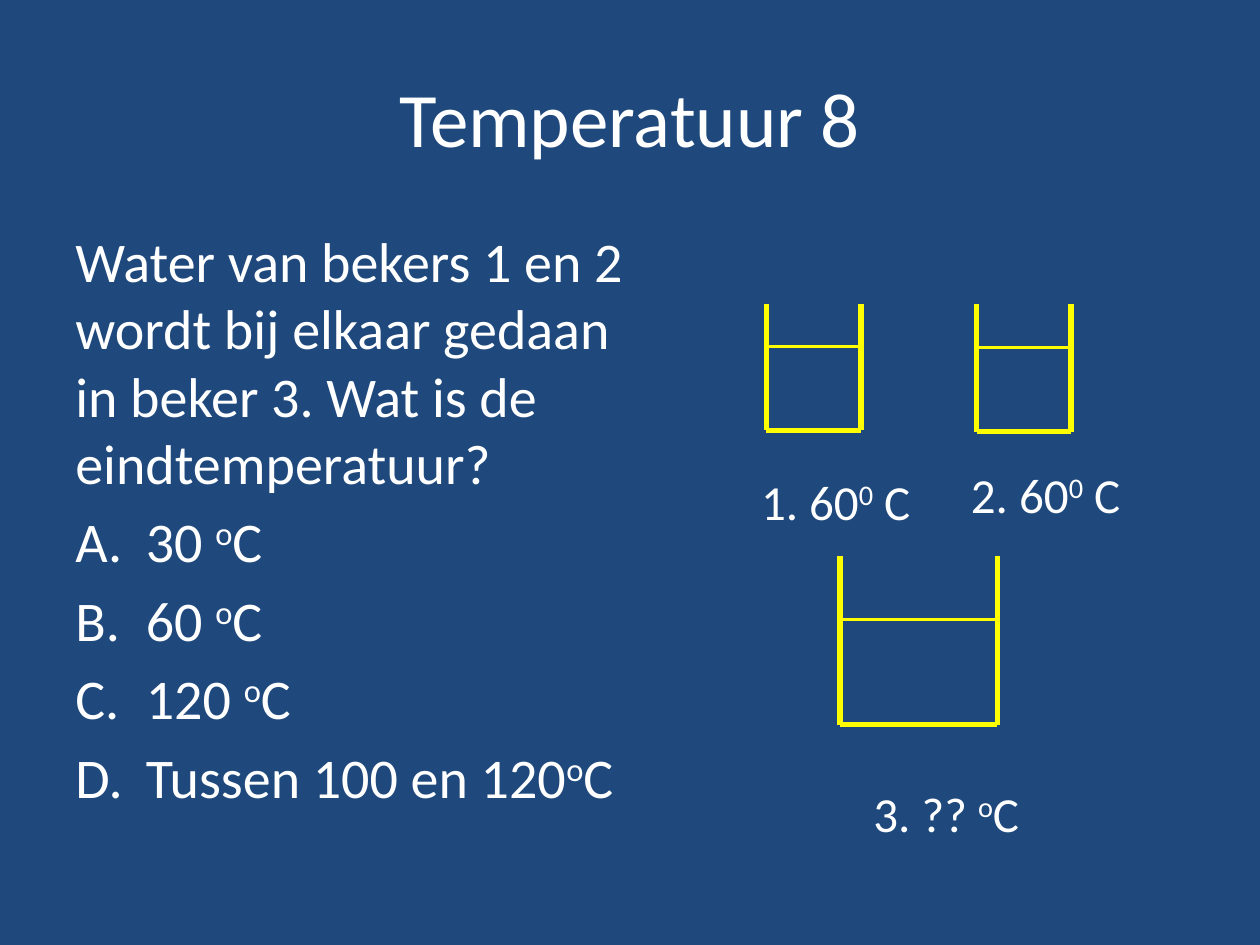
import pptx
import pptx.util
import pptx.dml.color
import pptx.enum.shapes
import pptx.enum.text
import pptx.oxml.ns
import lxml.etree

COLORS = {"background": "1F497D", "text": "FFFFFF", "glass": "FFFF00"}
FONT = "Calibri"
COLUMNS, ROWS = 120, 90

presentation = pptx.Presentation()
presentation.slide_width = pptx.util.Inches(10)
presentation.slide_height = pptx.util.Inches(7.5)
column = presentation.slide_width / COLUMNS
row = presentation.slide_height / ROWS
slide = presentation.slides.add_slide(presentation.slide_layouts[6])
slide.background.fill.solid()
slide.background.fill.fore_color.rgb = pptx.dml.color.RGBColor.from_string(COLORS["background"])


def add_text(left, top, width, height, lines, size, **frame_format):
    """Add a text box; in each line, text between two ^ marks is superscript."""
    box = slide.shapes.add_textbox(
        round(left * column), round(top * row), round(width * column), round(height * row))
    for name, value in frame_format.items():
        setattr(box.text_frame, name, value)
    for index, line in enumerate(lines):
        paragraph = box.text_frame.paragraphs[0] if index == 0 else box.text_frame.add_paragraph()
        for part, text in enumerate(line.split("^")):
            run = paragraph.add_run()
            run.text = text
            font_format = {"name": FONT, "size": pptx.util.Pt(size)}
            for name, value in font_format.items():
                setattr(run.font, name, value)
            run.font.color.rgb = pptx.dml.color.RGBColor.from_string(COLORS["text"])
            if part % 2:
                run._r.get_or_add_rPr().set("baseline", "30000")
    return box.text_frame.paragraphs


def add_line(start_column, start_row, end_column, end_row, weight):
    line = slide.shapes.add_connector(
        pptx.enum.shapes.MSO_CONNECTOR.STRAIGHT,
        round(start_column * column), round(start_row * row),
        round(end_column * column), round(end_row * row))
    line.line.color.rgb = pptx.dml.color.RGBColor.from_string(COLORS["glass"])
    line.line.width = pptx.util.Pt(weight)
    lxml.etree.SubElement(line._element.spPr, pptx.oxml.ns.qn("a:effectLst"))


title = add_text(6, 3.6, 108, 15, ["Temperatuur 8"], 44, word_wrap=True,
                 vertical_anchor=pptx.enum.text.MSO_ANCHOR.MIDDLE)
title[0].alignment = pptx.enum.text.PP_ALIGN.CENTER

question, *answers = add_text(6, 21, 55, 59.4, [
    "Water van bekers 1 en 2 wordt bij elkaar gedaan in beker 3. Wat is de eindtemperatuur?",
    "30 ^o^C",
    "60 ^o^C",
    "120 ^o^C",
    "Tussen 100 en 120^o^C",
], 32, word_wrap=True)
indent = pptx.util.Inches(0.56)
for answer in answers:
    answer.space_before = pptx.util.Pt(6.4)
    properties = answer._p.get_or_add_pPr()
    properties.set("marL", str(indent))
    properties.set("indent", str(-indent))
    for tag, attribute, value in [("a:buFont", "typeface", FONT),
                                  ("a:buAutoNum", "type", "alphaUcPeriod")]:
        bullet = lxml.etree.SubElement(properties, pptx.oxml.ns.qn(tag))
        bullet.set(attribute, value)

# Beakers: left, right, rim, water level, bottom
beakers = [
    (73, 82, 29, 33, 41),
    (93, 102, 29, 33.1, 41.1),
    (80, 95, 53, 59, 69),
]
for left, right, rim, water, bottom in beakers:
    for side in (left, right):
        add_line(side, rim, side, bottom, 3)
    add_line(left, bottom, right, bottom, 3)
    add_line(left, water, right, water, 2)

# Labels: left, top, width, text
labels = [
    (71.3, 44.3, 17, "1. 60^0^ C"),
    (91.3, 43.6, 17, "2. 60^0^ C"),
    (82, 74, 16.7, "3. ?? ^o^C"),
]
for left, top, width, label in labels:
    add_text(left, top, width, 6.8, [label], 28, word_wrap=False,
             auto_size=pptx.enum.text.MSO_AUTO_SIZE.SHAPE_TO_FIT_TEXT)

presentation.save("out.pptx")
